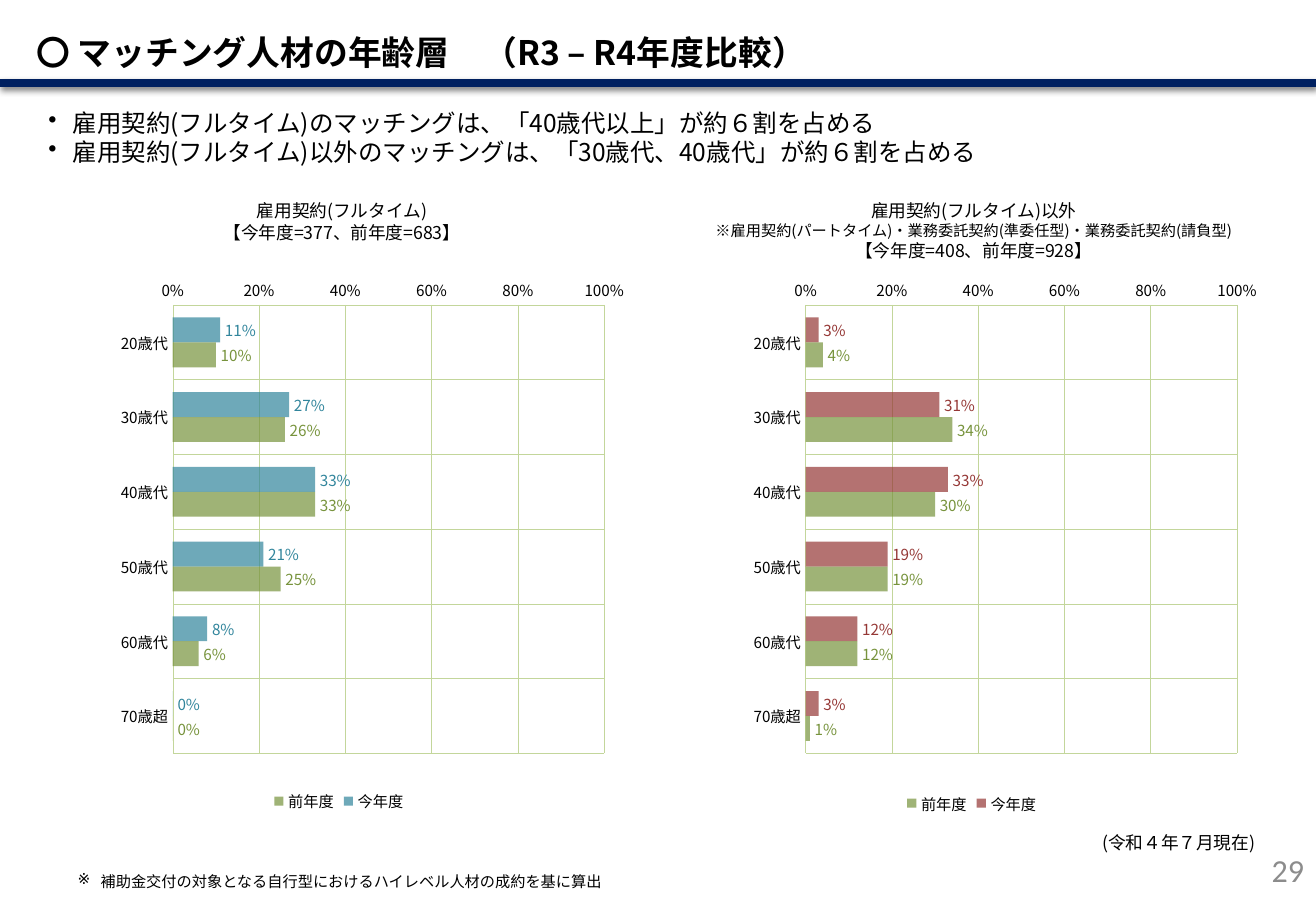
from lxml import etree
from pptx import Presentation
from pptx.chart.data import CategoryChartData
from pptx.dml.color import RGBColor
from pptx.enum.chart import XL_CHART_TYPE, XL_LABEL_POSITION, XL_LEGEND_POSITION, XL_TICK_MARK
from pptx.enum.shapes import MSO_CONNECTOR
from pptx.enum.text import MSO_ANCHOR, PP_ALIGN
from pptx.oxml import parse_xml
from pptx.oxml.ns import nsdecls, qn
from pptx.util import Pt

LEFT, CENTER, RIGHT = PP_ALIGN.LEFT, PP_ALIGN.CENTER, PP_ALIGN.RIGHT
TOP, MIDDLE = MSO_ANCHOR.TOP, MSO_ANCHOR.MIDDLE
BARS = XL_CHART_TYPE.BAR_CLUSTERED
OUTSIDE_END = XL_LABEL_POSITION.OUTSIDE_END
LEGEND_BOTTOM = XL_LEGEND_POSITION.BOTTOM
NO_TICK = XL_TICK_MARK.NONE
STRAIGHT = MSO_CONNECTOR.STRAIGHT

FONT = "Noto Sans CJK JP"
COLORS = {
    "text": "000000", "rule": "002060", "shadow": "808080", "number": "8C8C8C",
    "grid": "C3D69B", "previous": "77933C", "full_time": "31859C", "other": "953735",
}
AGES = ["20歳代", "30歳代", "40歳代", "50歳代", "60歳代", "70歳超"]
PLOT = {"x": 0.219, "y": 0.06, "w": 0.719, "h": 0.67}
CHART_TOP, CHART_WIDTH, CHART_HEIGHT = 157, 355.7, 396.7
HEADING_TOP, HEADING_WIDTH, HEADING_HEIGHT = 111.6, 350, 50
PANELS = [
    {
        "left": 24.5, "center": 202.7, "color": "full_time", "legend_y": 0.778,
        "heading": [("雇用契約(フルタイム)", 10.5), ("【今年度=377、前年度=683】", 10.5)],
        "current": [0.11, 0.27, 0.33, 0.21, 0.08, 0],
        "previous": [0.1, 0.26, 0.33, 0.25, 0.06, 0],
    },
    {
        "left": 399.6, "center": 577.1, "color": "other", "legend_y": 0.781,
        "heading": [
            ("雇用契約(フルタイム)以外", 10.5),
            ("※雇用契約(パートタイム)・業務委託契約(準委任型)・業務委託契約(請負型)", 9),
            ("【今年度=408、前年度=928】", 10.5),
        ],
        "current": [0.03, 0.31, 0.33, 0.19, 0.12, 0.03],
        "previous": [0.04, 0.34, 0.3, 0.19, 0.12, 0.01],
    },
]


def rgb(name):
    return RGBColor.from_string(COLORS[name])


def format_font(font, size, color="text", name=FONT, bold=False):
    font.size = Pt(size)
    font.name = name
    font.bold = bold
    font.color.rgb = rgb(color)


def add_bullet(para, mark, indent):
    properties = para._p.get_or_add_pPr()
    properties.set("marL", str(Pt(indent)))
    properties.set("indent", str(-Pt(indent)))
    etree.SubElement(properties, qn("a:buChar")).set("char", mark)


def add_text(page, lines, left, top, width, height, align=LEFT, anchor=TOP, color="text",
             name=FONT, bold=False, bullet=None, indent=14.4):
    box = page.shapes.add_textbox(Pt(left), Pt(top), Pt(width), Pt(height))
    frame = box.text_frame
    frame.word_wrap = True
    frame.vertical_anchor = anchor
    frame.margin_left = frame.margin_right = Pt(7.2)
    frame.margin_top = frame.margin_bottom = Pt(7.2 if anchor == TOP else 0)
    for index, (text, size) in enumerate(lines):
        para = frame.add_paragraph() if index else frame.paragraphs[0]
        para.alignment = align
        para.line_spacing = Pt(round(size * 1.19, 1))
        if bullet:
            add_bullet(para, bullet, indent)
        span = para.add_run()
        span.text = text
        format_font(span.font, size, color, name, bold)
        east_asian = etree.SubElement(span._r.get_or_add_rPr(), qn("a:ea"))
        east_asian.set("typeface", name)


def add_rule(page, y, width):
    rule = page.shapes.add_connector(STRAIGHT, Pt(0), Pt(y), Pt(width), Pt(y))
    rule.line.color.rgb = rgb("rule")
    rule.line.width = Pt(4.75)
    rule._element.spPr.append(parse_xml(
        f'<a:effectLst {nsdecls("a")}><a:outerShdw blurRad="{Pt(4)}" dist="{Pt(2)}" '
        f'dir="5400000"><a:srgbClr val="{COLORS["shadow"]}"/></a:outerShdw></a:effectLst>'))


def make_layout(target, **fractions):
    rows = [f'<c:{key}Mode val="edge"/>' for key in ("x", "y")]
    rows += [f'<c:{key} val="{value}"/>' for key, value in fractions.items()]
    kind = f'<c:layoutTarget val="{target}"/>' if target else ""
    return parse_xml(f'<c:layout {nsdecls("c")}><c:manualLayout>{kind}{"".join(rows)}'
                     '</c:manualLayout></c:layout>')


def set_layout(parent, layout, index):
    for old in parent.findall(qn("c:layout")):
        parent.remove(old)
    parent.insert(index, layout)


def style_axis(axis):
    axis.major_tick_mark = axis.minor_tick_mark = NO_TICK
    axis.format.line.fill.background()
    axis.has_major_gridlines = True
    grid = axis.major_gridlines.format.line
    grid.color.rgb = rgb("grid")
    grid.width = Pt(0.25)
    format_font(axis.tick_labels.font, 9)


def style_series(series, color):
    series.format.fill.solid()
    series.format.fill.fore_color.rgb = rgb(color)
    tone = series._element.spPr.find(".//" + qn("a:srgbClr"))
    etree.SubElement(tone, qn("a:alpha")).set("val", "70000")
    labels = series.data_labels
    labels.show_value = True
    labels.position = OUTSIDE_END
    labels.number_format = "0%"
    labels.number_format_is_linked = False
    format_font(labels.font, 9, color)


def add_age_chart(page, panel):
    data = CategoryChartData(number_format="0%")
    data.categories = AGES
    data.add_series("今年度", panel["current"])
    data.add_series("前年度", panel["previous"])
    chart = page.shapes.add_chart(BARS, Pt(panel["left"]), Pt(CHART_TOP), Pt(CHART_WIDTH),
                                  Pt(CHART_HEIGHT), data).chart
    chart.has_title = False
    format_font(chart.font, 9)
    plot = chart.plots[0]
    plot.gap_width = 100
    plot.vary_by_categories = False
    for series, color in zip(plot.series, (panel["color"], "previous")):
        style_series(series, color)

    style_axis(chart.category_axis)
    chart.category_axis.reverse_order = True
    values = chart.value_axis
    style_axis(values)
    values.minimum_scale, values.maximum_scale, values.major_unit = 0, 1, 0.2
    values.tick_labels.number_format = "0%"
    values.tick_labels.number_format_is_linked = False

    chart.has_legend = True
    legend = chart.legend
    legend.position = LEGEND_BOTTOM
    legend.include_in_layout = False
    format_font(legend.font, 9)
    set_layout(legend._element, make_layout(None, x=0.38, y=panel["legend_y"]), 1)
    set_layout(chart._chartSpace.chart.plotArea, make_layout("inner", **PLOT), 0)


def main():
    deck = Presentation()
    deck.slide_width, deck.slide_height = Pt(780), Pt(540)
    page = deck.slides.add_slide(deck.slide_layouts[6])

    add_text(page, [("〇 マッチング人材の年齢層\u3000（R3 – R4年度比較）", 20)],
             14.4, 9.4, 751, 42.5, anchor=MIDDLE, bold=True)
    add_text(page, [("雇用契約(フルタイム)のマッチングは、「40歳代以上」が約６割を占める", 14.5),
                    ("雇用契約(フルタイム)以外のマッチングは、「30歳代、40歳代」が約６割を占める", 14.5)],
             21.6, 57, 737, 50, bullet="•")
    for panel in PANELS:
        add_text(page, panel["heading"], panel["center"] - HEADING_WIDTH / 2, HEADING_TOP,
                 HEADING_WIDTH, HEADING_HEIGHT, align=CENTER)
        add_age_chart(page, panel)
    add_text(page, [("(令和４年７月現在)", 10.5)], 601, 485.3, 150, 28, align=RIGHT, anchor=MIDDLE)
    add_text(page, [("補助金交付の対象となる自行型におけるハイレベル人材の成約を基に算出", 9)],
             38.9, 508.3, 400, 28, anchor=MIDDLE, bullet="※", indent=13.7)
    add_rule(page, 49, 780)
    add_text(page, [("29", 19)], 733, 501.8, 47, 27.4, align=RIGHT, anchor=MIDDLE,
             color="number", name="Calibri")
    deck.save("out.pptx")


if __name__ == "__main__":
    main()
